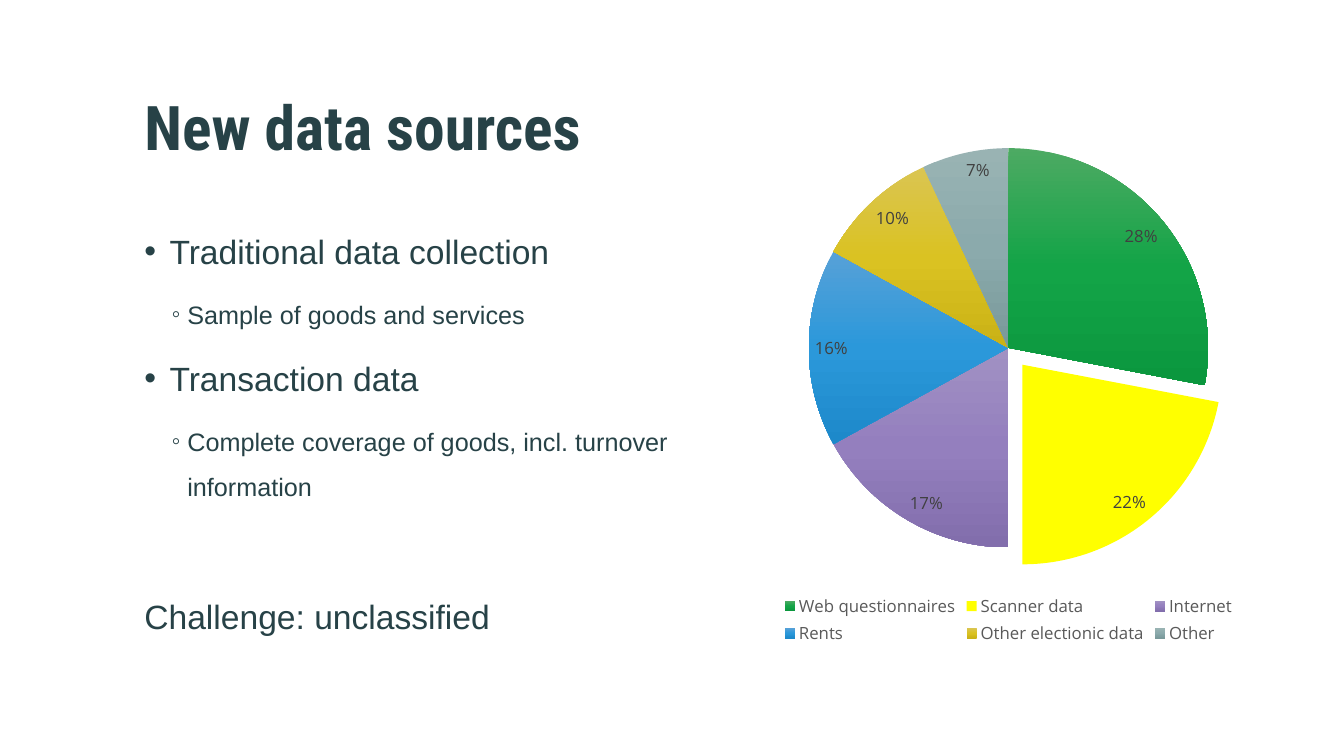
from copy import deepcopy
from lxml.etree import SubElement
from pptx import Presentation
from pptx.chart.data import CategoryChartData
from pptx.dml.color import RGBColor
from pptx.enum.chart import XL_CHART_TYPE, XL_LABEL_POSITION, XL_LEGEND_POSITION
from pptx.enum.text import MSO_ANCHOR
from pptx.oxml.ns import qn
from pptx.util import Pt

PX = 9525  # 96 px to the inch
DARK_TEAL = RGBColor(0x27, 0x42, 0x47)
LEGEND_GRAY = RGBColor(0x59, 0x59, 0x59)
LABEL_GRAY = RGBColor(0x40, 0x40, 0x40)
YELLOW = RGBColor(0xFF, 0xFF, 0x00)
GREENS = RGBColor(0x4D, 0xAA, 0x63), RGBColor(0x13, 0xA4, 0x47), RGBColor(0x0B, 0x97, 0x3E)
PURPLES = RGBColor(0xA1, 0x91, 0xC3), RGBColor(0x94, 0x7F, 0xBE), RGBColor(0x82, 0x6E, 0xAC)
BLUES = RGBColor(0x57, 0xA1, 0xD8), RGBColor(0x2B, 0x98, 0xDA), RGBColor(0x1D, 0x89, 0xCA)
GOLDS = RGBColor(0xDA, 0xC5, 0x52), RGBColor(0xDA, 0xC2, 0x22), RGBColor(0xCA, 0xB2, 0x16)
GRAYS = RGBColor(0x99, 0xB3, 0xB3), RGBColor(0x8B, 0xAA, 0xAC), RGBColor(0x79, 0x99, 0x9A)


def set_font(font, name, size, color, bold=False):
    font.name, font.size, font.bold = name, Pt(size), bold
    font.color.rgb = color


def add_text_frame(left, top, width, height):
    box = slide.shapes.add_textbox(left * PX, top * PX, width * PX, height * PX)
    box.text_frame.word_wrap = True
    return box.text_frame


deck = Presentation()
deck.slide_width, deck.slide_height = 1280 * PX, 720 * PX
slide = deck.slides.add_slide(deck.slide_layouts[6])

# Title
title = add_text_frame(128, 58, 1014, 137)
title.vertical_anchor = MSO_ANCHOR.MIDDLE
title.margin_top = 0
heading = title.paragraphs[0]
heading.text = "New data sources"
heading.line_spacing = 0.9
set_font(heading.font, "Roboto Condensed", 44, DARK_TEAL, True)

# Data collection methods: bullet, indent and hanging in px, size, space before and after in pt
TOPIC = ("•", 24, 24, 24, 0, 9)
DETAIL = ("◦", 41, 15, 18, 0, 6)
CLOSING = ("", 0, 0, 24, 47, 9)
methods = [
    ("Traditional data collection", TOPIC),
    ("Sample of goods and services", DETAIL),
    ("Transaction data", TOPIC),
    ("Complete coverage of goods, incl. turnover information", DETAIL),
    ("Challenge: unclassified", CLOSING),
]
body = add_text_frame(128, 196, 574, 418)
for index, (wording, level) in enumerate(methods):
    bullet, indent, hanging, size, before, after = level
    paragraph = body.add_paragraph() if index else body.paragraphs[0]
    paragraph.text = wording
    paragraph.line_spacing = 1.5
    paragraph.space_after = Pt(after)
    if before:
        paragraph.space_before = Pt(before)
    if bullet:
        properties = paragraph._p.get_or_add_pPr()
        properties.set("marL", str(indent * PX))
        properties.set("indent", str(-hanging * PX))
        SubElement(properties, qn("a:buFont"), typeface="Arial")
        SubElement(properties, qn("a:buChar"), char=bullet)
    set_font(paragraph.font, "Arial", size, DARK_TEAL)

# Shares of the data sources
sources = [
    ("Web questionnaires", 0.28, GREENS),
    ("Scanner data", 0.22, YELLOW),
    ("Internet", 0.17, PURPLES),
    ("Rents", 0.16, BLUES),
    ("Other electionic data", 0.1, GOLDS),
    ("Other", 0.07, GRAYS),
]
shares = CategoryChartData(number_format="0%")
shares.categories = [name for name, _, _ in sources]
shares.add_series("Series 1", [share for _, share, _ in sources])
pie = slide.shapes.add_chart(
    XL_CHART_TYPE.PIE, 664 * PX, 107 * PX, 593 * PX, 511 * PX, shares).chart
pie.has_title = False
pie.font.name, pie.font.size = "Open Sans", Pt(10)
pie.has_legend = True
pie.legend.position = XL_LEGEND_POSITION.BOTTOM
pie.legend.include_in_layout = False
set_font(pie.legend.font, "Open Sans", 12, LEGEND_GRAY)

plot = pie.plots[0]
plot.vary_by_categories = True
plot.has_data_labels = True
labels = plot.data_labels
label_format = {
    "show_value": True, "show_percentage": False, "number_format": "0%",
    "number_format_is_linked": False, "position": XL_LABEL_POSITION.INSIDE_END,
}
for attribute, value in label_format.items():
    setattr(labels, attribute, value)
set_font(labels.font, "Open Sans", 12, LABEL_GRAY)

for index, (_, _, colors) in enumerate(sources):
    slice_format = plot.series[0].points[index].format
    slice_format.line.fill.background()
    fill = slice_format.fill
    if colors == YELLOW:
        fill.solid()
        fill.fore_color.rgb = YELLOW
        continue
    fill.gradient()
    fill.gradient_angle = 270
    stops = pie.element.findall(".//" + qn("a:gsLst"))[-1]
    stops.insert(1, deepcopy(stops[0]))
    for stop, color, position in zip(fill.gradient_stops, colors, (0, 0.5, 1)):
        stop.color.rgb = color
        stop.position = position

# Pull the scanner data slice out of the pie
scanner_slice = pie.element.findall(".//" + qn("c:dPt"))[1]
explosion = SubElement(scanner_slice, qn("c:explosion"), val="11")
scanner_slice.find(qn("c:spPr")).addprevious(explosion)

deck.save("out.pptx")
